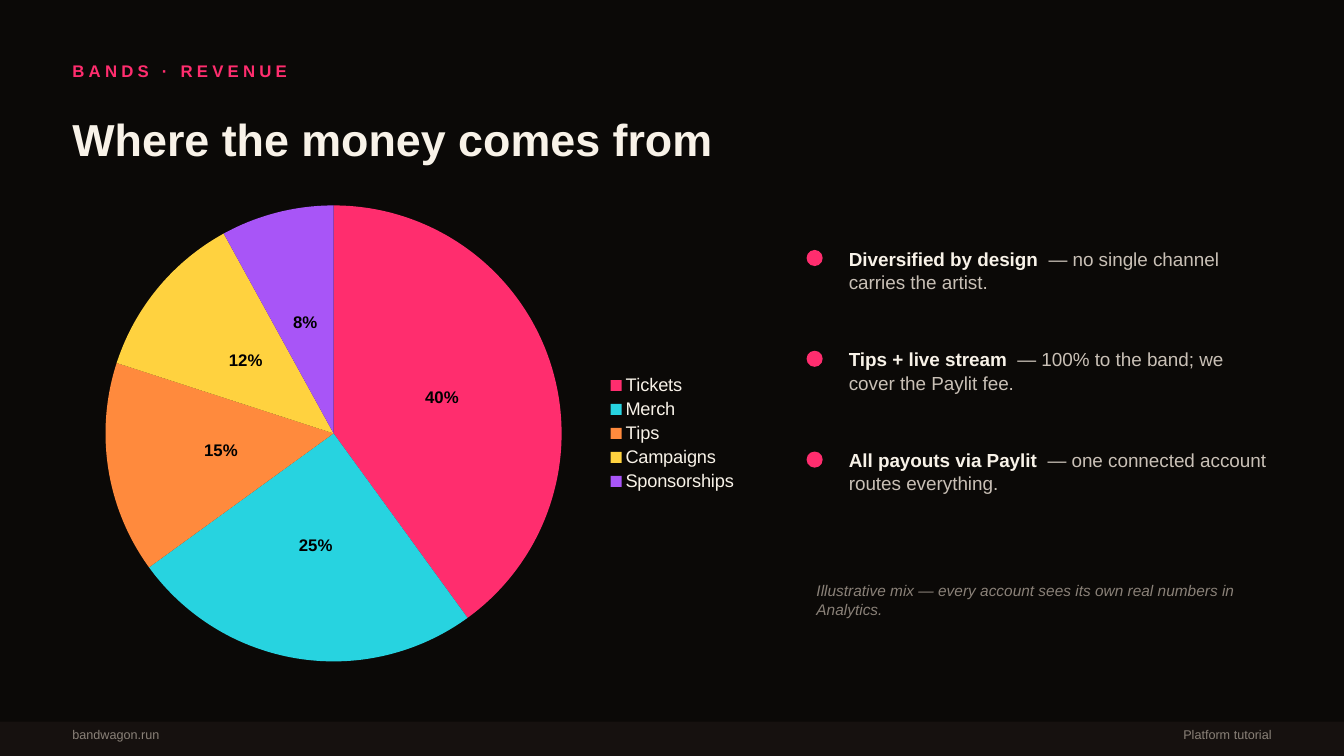
from pptx import Presentation
from pptx import util as u
from pptx.chart.data import CategoryChartData
from pptx.dml.color import RGBColor
from pptx.enum import chart as ch, shapes, text

COLORS = {
    "bg": "0B0907", "footer": "16110F", "cream": "F8F2E8", "body": "C9C0B6",
    "muted": "8A8178", "black": "000000", "pink": "FF2D6E", "cyan": "27D3E0",
    "orange": "FF8A3D", "yellow": "FFD23F", "purple": "A855F7",
}
MIDDLE = text.MSO_ANCHOR.MIDDLE
TOP = text.MSO_ANCHOR.TOP


class Deck:
    font = "Arial"

    def __init__(self, width, height):
        self.prs = Presentation()
        self.prs.slide_width = u.Inches(width)
        self.prs.slide_height = u.Inches(height)
        self.s = self.prs.slides.add_slide(self.prs.slide_layouts[6])
        self.paint(self.s.background.fill, "bg")

    def paint(self, fill, color):
        fill.solid()
        fill.fore_color.rgb = RGBColor.from_string(COLORS[color])

    def style(self, font, size, color, bold=False, italic=False):
        font.name, font.size = self.font, u.Pt(size)
        font.bold, font.italic = bold, italic
        font.color.rgb = RGBColor.from_string(COLORS[color])

    def shape(self, kind, box, color):
        sp = self.s.shapes.add_shape(kind, *map(u.Inches, box))
        sp.shadow.inherit = False
        self.paint(sp.fill, color)
        sp.line.fill.background()

    def text(self, box, runs, size, anchor=MIDDLE, align=None, line=None):
        """Add one paragraph; each run is (words, colour, bold, italic, spacing in pt)."""
        tf = self.s.shapes.add_textbox(*map(u.Inches, box)).text_frame
        tf.word_wrap = True
        tf.vertical_anchor = anchor
        p = tf.paragraphs[0]
        p.alignment, p.line_spacing = align, line
        for words, color, bold, italic, spacing in runs:
            r = p.add_run()
            r.text = words
            self.style(r.font, size, color, bold, italic)
            if spacing:
                r.font._element.set("spc", str(int(spacing * 100)))

    def pie(self, box, slices):
        """Draw a pie from (category, value, colour) rows."""
        data = CategoryChartData()
        data.categories = [name for name, _, _ in slices]
        data.add_series("Series 1", [value for _, value, _ in slices])
        chart = self.s.shapes.add_chart(
            ch.XL_CHART_TYPE.PIE, *map(u.Inches, box), data).chart
        chart.has_title = False
        self.style(chart.font, 12, "black")
        chart.has_legend = True
        chart.legend.position = ch.XL_LEGEND_POSITION.RIGHT
        chart.legend.include_in_layout = False
        self.style(chart.legend.font, 13, "cream")

        plot = chart.plots[0]
        plot.vary_by_categories = True
        plot.has_data_labels = True
        labels = plot.data_labels
        labels.show_percentage, labels.show_value = True, False
        labels.number_format, labels.number_format_is_linked = "0%", False
        labels.position = ch.XL_LABEL_POSITION.CENTER
        self.style(labels.font, 12, "black", bold=True)
        for i, (_, _, color) in enumerate(slices):
            point = plot.series[0].points[i]
            self.paint(point.format.fill, color)
            point.format.line.fill.background()


def main():
    deck = Deck(13.33, 7.5)
    left, width = 0.62, 12.09

    deck.shape(shapes.MSO_SHAPE.RECTANGLE, (0, 7.16, 13.33, 0.34), "footer")
    for x, words, align in (
        (left, "bandwagon.run", text.PP_ALIGN.LEFT),
        (left + width - 5, "Platform tutorial", text.PP_ALIGN.RIGHT),
    ):
        deck.text((x, 7.14, 5, 0.3), [(words, "muted", False, False, 0)], 9, align=align)

    deck.text((left, 0.55, width, 0.3),
              [("BANDS · REVENUE", "pink", True, False, 3)], 12)
    deck.text((left, 0.92, width, 0.9),
              [("Where the money comes from", "cream", True, False, 0)], 32)

    deck.pie((left, 1.9, 6.8, 4.8), [
        ("Tickets", 40, "pink"),
        ("Merch", 25, "cyan"),
        ("Tips", 15, "orange"),
        ("Campaigns", 12, "yellow"),
        ("Sponsorships", 8, "purple"),
    ])

    points = [
        ("Diversified by design", "— no single channel carries the artist."),
        ("Tips + live stream", "— 100% to the band; we cover the Paylit fee."),
        ("All payouts via Paylit", "— one connected account routes everything."),
    ]
    for i, (lead, detail) in enumerate(points):
        y = 2.4 + i
        deck.shape(shapes.MSO_SHAPE.OVAL, (8, y + 0.08, 0.16, 0.16), "pink")
        deck.text((8.32, y, 4.38, 0.9), [
            (lead, "cream", True, False, 0),
            (" ", "cream", True, False, 3.75),
            (detail, "body", False, False, 0),
        ], 13.5, anchor=TOP, line=1.02)

    note = "Illustrative mix — every account sees its own real numbers in Analytics."
    deck.text((8, 5.6, 4.7, 0.7), [(note, "muted", False, True, 0)], 11)

    deck.prs.save("out.pptx")


if __name__ == "__main__":
    main()
